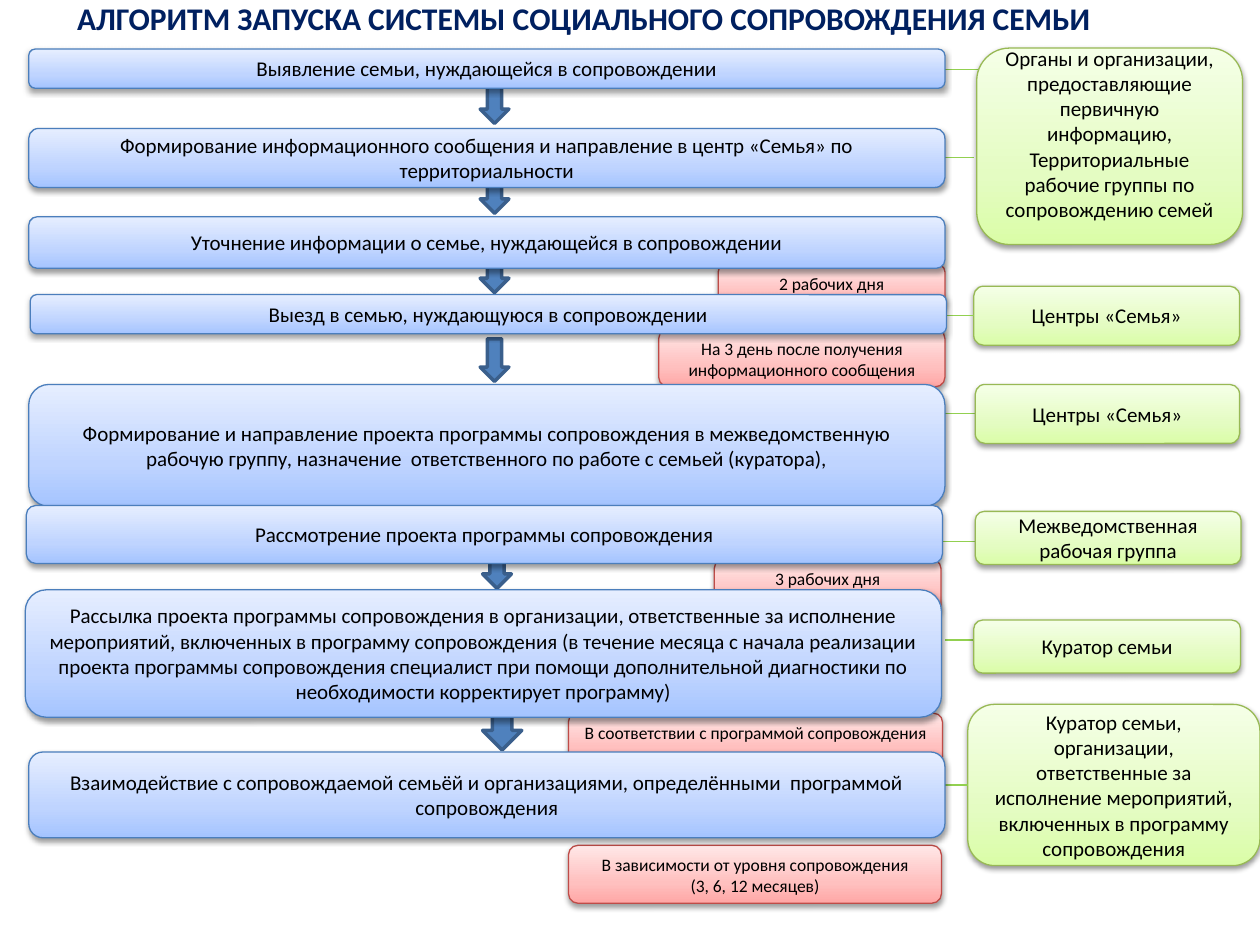
from copy import deepcopy
from dataclasses import dataclass, field
from typing import NamedTuple, Optional

from lxml.etree import SubElement
from pptx import Presentation
from pptx.dml.color import RGBColor
from pptx.enum.shapes import MSO_CONNECTOR as CONN, MSO_SHAPE as SHAPE
from pptx.enum.text import MSO_ANCHOR as ANCHOR, MSO_AUTO_SIZE as AUTO, PP_ALIGN as ALIGN
from pptx.oxml.ns import qn
from pptx.util import Cm, Pt


class Style(NamedTuple):
    """Look of one family of boxes; stops run from the bottom up."""
    stops: tuple
    line: str
    size: float
    anchor: ANCHOR


@dataclass(frozen=True)
class Theme:
    """Colours and type sizes of the slide."""
    font: str = "Calibri"
    text: str = "000000"
    title: str = "002060"
    title_size: float = 18
    link: str = "92D050"
    arrow: str = "4F81BD"
    arrow_line: str = "3A5F8C"
    thin: float = 0.75
    thick: float = 2
    positions: tuple = (0, 0.35, 1)
    step: Style = Style(("A4C4FF", "BFD4FF", "E6EEFF"), "4B7EBC", 12, ANCHOR.MIDDLE)
    term: Style = Style(("FFA6A5", "FFC0BF", "FFE7E7"), "BF4C48", 10, ANCHOR.TOP)
    actor: Style = Style(("DAFDA7", "E4FCC2", "F5FFE7"), "98B955", 12, ANCHOR.MIDDLE)


@dataclass(frozen=True)
class Box:
    """Rounded box with its place in centimetres and its paragraphs."""
    x: float
    y: float
    w: float
    h: float
    paragraphs: list = field(default_factory=list)
    bottom: float = 0.13


class Arrow(NamedTuple):
    """Down arrow between two steps, in centimetres."""
    y: float
    h: float = 0.79
    x: float = 9.68
    w: float = 0.58


class Link(NamedTuple):
    """Horizontal line from a step to an actor, in centimetres."""
    x1: float
    x2: float
    y: float


class Joint(NamedTuple):
    """Line from a step to the left side of the actor with this index."""
    x: float
    actor: int


T = Theme()
STEP_X, STEP_W = 0.58, 18.47

STEPS = [
    Box(STEP_X, 0.99, STEP_W, 0.79, ["Выявление семьи, нуждающейся в сопровождении"]),
    Box(STEP_X, 2.59, STEP_W, 1.19, ["Формирование информационного сообщения и направление в центр "
                                     "«Семья» по территориальности"]),
    Box(STEP_X, 4.37, STEP_W, 1.04, ["Уточнение информации о семье, нуждающейся в сопровождении"]),
    Box(0.61, 5.94, STEP_W, 0.79, ["Выезд в семью, нуждающуюся в сопровождении"]),
    Box(STEP_X, 7.75, STEP_W, 2.46, ["Формирование и направление проекта программы сопровождения в "
                                     "межведомственную рабочую группу, назначение  ответственного "
                                     "по работе с семьей (куратора),"]),
    Box(0.53, 10.19, STEP_W, 1.17, ["Рассмотрение проекта программы сопровождения"]),
    Box(0.51, 11.89, STEP_W, 2.57, ["Рассылка проекта программы сопровождения в организации, "
                                    "ответственные за исполнение мероприятий, включенных в программу "
                                    "сопровождения (в течение месяца с начала реализации проекта "
                                    "программы сопровождения специалист при помощи дополнительной "
                                    "диагностики по необходимости корректирует программу)"]),
    Box(STEP_X, 15.16, STEP_W, 1.73, ["Взаимодействие с сопровождаемой семьёй и организациями, "
                                      "определёнными  программой сопровождения"]),
]
TERMS = [
    Box(14.48, 5.33, 4.57, 0.91, ["2 рабочих дня"]),
    Box(13.28, 6.63, 5.77, 1.17, ["На 3 день после получения информационного сообщения"]),
    Box(14.4, 11.28, 4.57, 1.09, ["3 рабочих дня"]),
    Box(11.46, 14.38, 7.54, 1.04, ["В соответствии с программой сопровождения"]),
    Box(11.46, 17.04, 7.52, 1.17, ["В зависимости от уровня сопровождения", "(3, 6, 12 месяцев)"]),
]
ACTORS = [
    Box(19.69, 0.97, 5.36, 3.96, ["Органы и организации, предоставляющие первичную информацию,",
                                  "Территориальные рабочие группы по сопровождению семей"], 0.64),
    Box(19.63, 5.77, 5.36, 1.19, ["Центры «Семья»"]),
    Box(19.66, 7.75, 5.33, 1.19, ["Центры «Семья»"]),
    Box(19.66, 10.31, 5.36, 1.07, ["Межведомственная рабочая группа"]),
    Box(19.63, 12.5, 5.38, 1.07, ["Куратор семьи"]),
    Box(19.51, 14.2, 5.89, 3.25, ["Куратор семьи, организации, ответственные за исполнение "
                                  "мероприятий, включенных в программу сопровождения"]),
]
ARROWS = [Arrow(1.7), Arrow(3.51), Arrow(5.11), Arrow(6.83, 0.86),
          Arrow(10.95, 0.91, 9.73), Arrow(13.72, 1.4, 9.73, 0.79)]
LINKS = [Link(18.85, 20.04, 1.4), Link(18.47, 19.63, 3.18), Link(18.64, 19.86, 8.33),
         Link(18.85, 20.07, 10.92), Link(19.05, 20.24, 12.9)]
JOINTS = [Joint(18.47, 1), Joint(18.26, 5)]


def rgb(value: str) -> RGBColor:
    """Turn a hex string into a colour."""
    return RGBColor.from_string(value)


def set_line(sp, color: str, width: float) -> None:
    """Give a shape or connector a solid line."""
    sp.line.color.rgb = rgb(color)
    sp.line.width = Pt(width)


def set_gradient(sp, colors: tuple) -> None:
    """Fill a shape with a vertical three-stop gradient."""
    sp.fill.gradient()
    sp.fill.gradient_angle = 90
    stops = sp._element.spPr.find(".//" + qn("a:gsLst"))
    stops.append(deepcopy(stops[-1]))
    for stop, pos, color in zip(sp.fill.gradient_stops, T.positions, colors):
        stop.position = pos
        stop.color.rgb = rgb(color)


def set_shadow(sp) -> None:
    """Add a soft shadow below a shape."""
    sp.shadow.inherit = False
    effects = sp._element.spPr.find(qn("a:effectLst"))
    shadow = SubElement(effects, qn("a:outerShdw"), blurRad=str(Pt(3.1)), dist=str(Pt(1.6)),
                        dir="5400000", rotWithShape="0")
    color = SubElement(shadow, qn("a:srgbClr"), val="000000")
    SubElement(color, qn("a:alpha"), val="38000")


def set_font(p, size: float, color: str, bold: bool = False) -> None:
    """Centre a paragraph and set its font."""
    p.alignment = ALIGN.CENTER
    p.font.name = T.font
    p.font.size = Pt(size)
    p.font.color.rgb = rgb(color)
    p.font.bold = bold


def draw_title(s, text: str) -> None:
    """Place and format the title placeholder."""
    sp = s.shapes.title
    sp.left, sp.top, sp.width, sp.height = Cm(-0.1), Cm(-0.15), Cm(23.75), Cm(1.02)
    tf = sp.text_frame
    tf.text = text
    tf.auto_size = AUTO.NONE
    tf.vertical_anchor = ANCHOR.TOP
    set_font(tf.paragraphs[0], T.title_size, T.title, True)


def draw_box(s, box: Box, style: Style):
    """Draw a rounded box with its text."""
    sp = s.shapes.add_shape(SHAPE.ROUNDED_RECTANGLE, Cm(box.x), Cm(box.y), Cm(box.w), Cm(box.h))
    set_gradient(sp, style.stops)
    set_line(sp, style.line, T.thin)
    set_shadow(sp)
    tf = sp.text_frame
    tf.word_wrap = True
    tf.vertical_anchor = style.anchor
    tf.margin_bottom = Cm(box.bottom)
    tf.text = "\n".join(box.paragraphs)
    for p in tf.paragraphs:
        set_font(p, style.size, T.text)
    return sp


def draw_arrow(s, arrow: Arrow) -> None:
    """Draw a down arrow."""
    sp = s.shapes.add_shape(SHAPE.DOWN_ARROW, Cm(arrow.x), Cm(arrow.y), Cm(arrow.w), Cm(arrow.h))
    sp.fill.solid()
    sp.fill.fore_color.rgb = rgb(T.arrow)
    set_line(sp, T.arrow_line, T.thick)
    sp.shadow.inherit = False


def draw_link(s, x1: int, x2: int, y: int, target: Optional[object] = None) -> None:
    """Draw a horizontal line, joined to the left side of a target if there is one."""
    line = s.shapes.add_connector(CONN.STRAIGHT, x1, y, x2, y)
    set_line(line, T.link, T.thin)
    SubElement(line._element.spPr, qn("a:effectLst"))
    if target is not None:
        line.end_connect(target, 1)


def main() -> None:
    """Build and save the slide."""
    prs = Presentation()
    prs.slide_width, prs.slide_height = Cm(25.4), Cm(19.05)
    s = prs.slides.add_slide(prs.slide_layouts[5])
    draw_title(s, "АЛГОРИТМ ЗАПУСКА СИСТЕМЫ СОЦИАЛЬНОГО СОПРОВОЖДЕНИЯ СЕМЬИ")
    for arrow in ARROWS:
        draw_arrow(s, arrow)
    for link in LINKS:
        draw_link(s, Cm(link.x1), Cm(link.x2), Cm(link.y))
    actors = [draw_box(s, box, T.actor) for box in ACTORS]
    for joint in JOINTS:
        sp = actors[joint.actor]
        draw_link(s, Cm(joint.x), sp.left, sp.top + sp.height // 2, sp)
    for boxes, style in ((TERMS, T.term), (STEPS, T.step)):
        for box in boxes:
            draw_box(s, box, style)
    prs.save("out.pptx")


if __name__ == "__main__":
    main()
